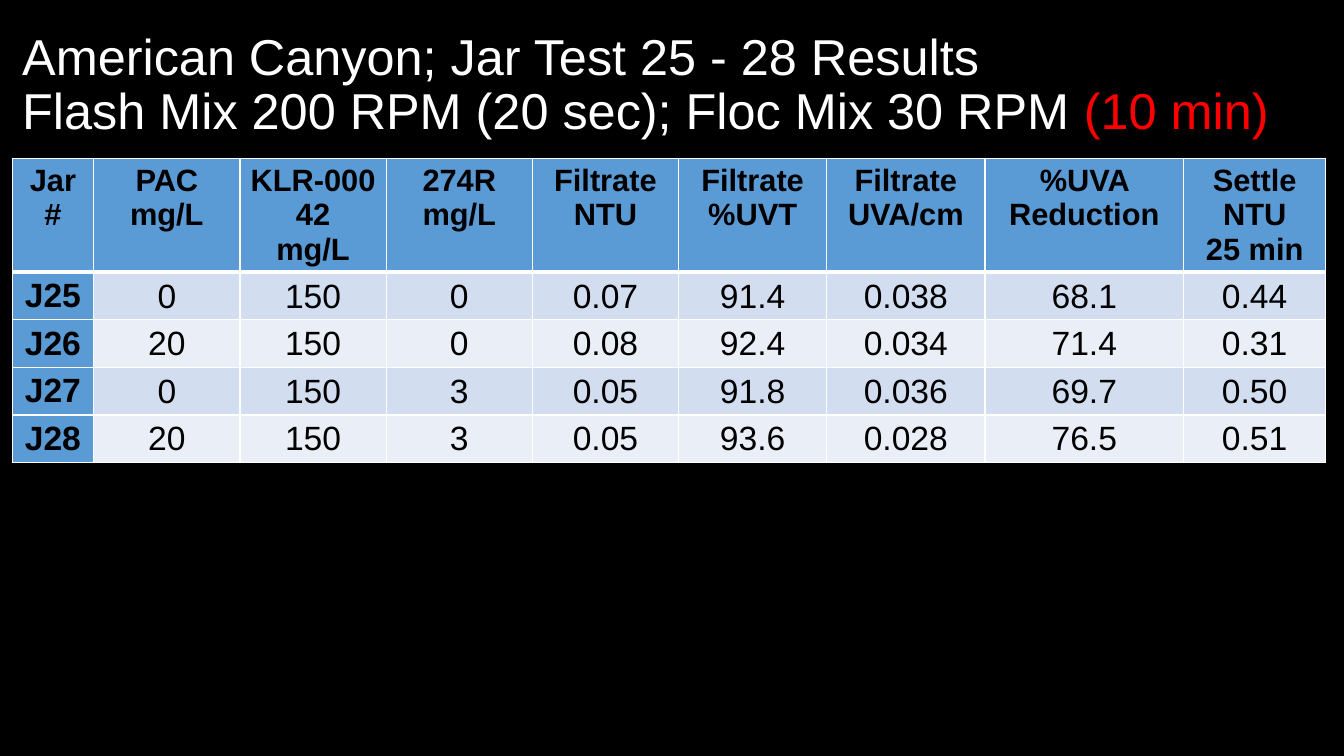
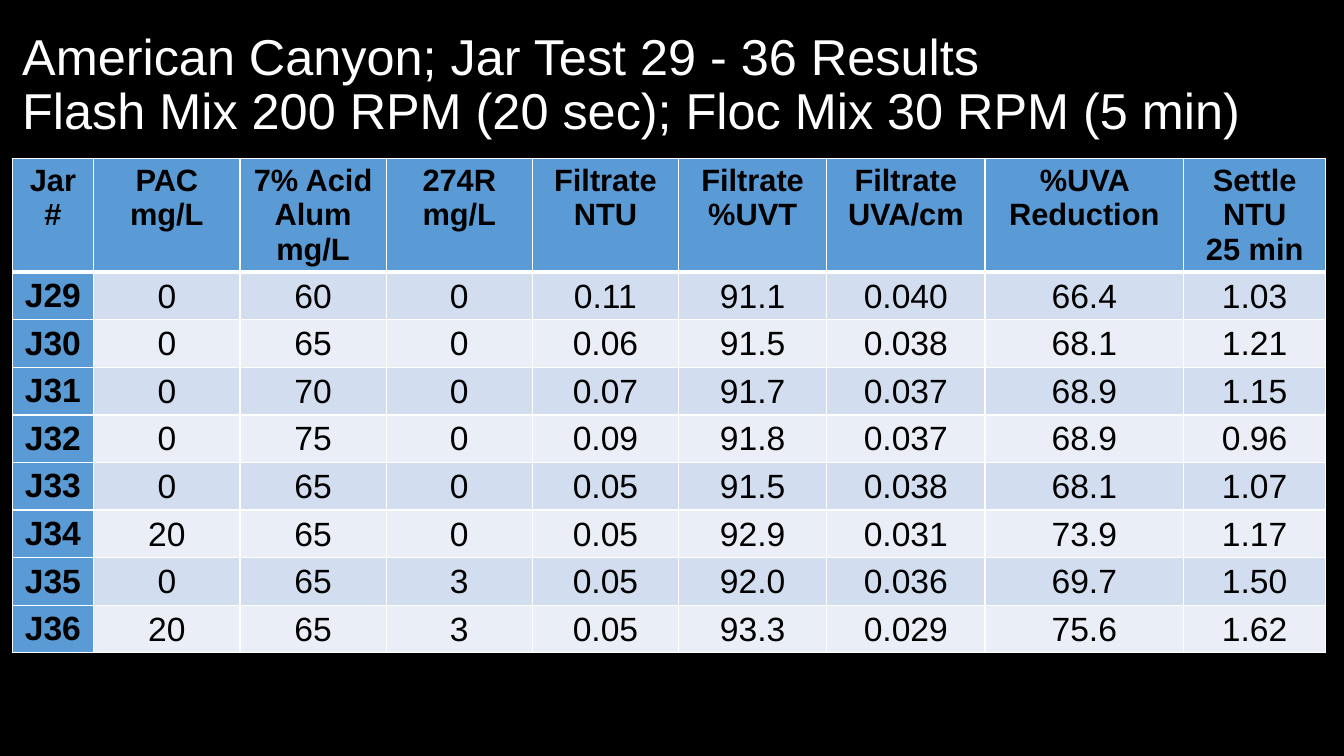
from lxml.etree import SubElement
from pptx import Presentation
from pptx.dml.color import RGBColor
from pptx.enum.text import MSO_ANCHOR, MSO_AUTO_SIZE, PP_ALIGN
from pptx.oxml.ns import qn
from pptx.util import Inches, Pt

MIX = "Flash Mix 200 RPM (20 sec); Floc Mix 30 RPM "
TESTS = [
    {
        "first": 25,
        "floc_time": ("(10 min)", "FF0000"),
        "coagulant": "KLR-00042\nmg/L",
        "rows": [
            ("0", "150", "0", "0.07", "91.4", "0.038", "68.1", "0.44"),
            ("20", "150", "0", "0.08", "92.4", "0.034", "71.4", "0.31"),
            ("0", "150", "3", "0.05", "91.8", "0.036", "69.7", "0.50"),
            ("20", "150", "3", "0.05", "93.6", "0.028", "76.5", "0.51"),
        ],
    },
    {
        "first": 29,
        "floc_time": ("(5 min)", "FFFFFF"),
        "coagulant": "7% Acid Alum\nmg/L",
        "rows": [
            ("0", "60", "0", "0.11", "91.1", "0.040", "66.4", "1.03"),
            ("0", "65", "0", "0.06", "91.5", "0.038", "68.1", "1.21"),
            ("0", "70", "0", "0.07", "91.7", "0.037", "68.9", "1.15"),
            ("0", "75", "0", "0.09", "91.8", "0.037", "68.9", "0.96"),
            ("0", "65", "0", "0.05", "91.5", "0.038", "68.1", "1.07"),
            ("20", "65", "0", "0.05", "92.9", "0.031", "73.9", "1.17"),
            ("0", "65", "3", "0.05", "92.0", "0.036", "69.7", "1.50"),
            ("20", "65", "3", "0.05", "93.3", "0.029", "75.6", "1.62"),
        ],
    },
]
MEASURES = ["274R\nmg/L", "Filtrate\nNTU", "Filtrate\n%UVT", "Filtrate\nUVA/cm",
            "%UVA Reduction", "Settle\nNTU\n25 min"]
COL_WIDTHS = [0.81, 1.45, 1.45, 1.45, 1.45, 1.47, 1.57, 1.97, 1.41]
HEADER_H, ROW_H = 1.13, 0.47
LEFT, WIDTH, TITLE_TOP, TABLE_TOP = 0.12, 13.03, 0.13, 1.57
FONT, BLACK, WHITE = "Arial", "000000", "FFFFFF"
HEAD_FILL, BANDS = "5B9BD5", ("D2DEEF", "EAEFF7")


def rgb(value):
    return RGBColor.from_string(value)


def style_run(r, size, color, bold=False):
    r.font.name, r.font.size, r.font.bold = FONT, Pt(size), bold
    r.font.color.rgb = rgb(color)


def set_borders(cell, bottom):
    tc_pr = cell._tc.get_or_add_tcPr()
    for side, width in (("L", 1), ("R", 1), ("T", 1), ("B", bottom)):
        ln = SubElement(tc_pr, qn(f"a:ln{side}"), w=str(Pt(width)))
        fill = SubElement(ln, qn("a:solidFill"))
        SubElement(fill, qn("a:srgbClr"), val=WHITE)


def format_cell(cell, text, row, col):
    cell.text_frame.text = text
    is_header = row == 0
    is_label = is_header or col == 0
    for p in cell.text_frame.paragraphs:
        p.alignment = PP_ALIGN.CENTER
        for r in p.runs:
            style_run(r, 22 if is_header else 24, BLACK, is_label)
    if not is_label:
        cell.vertical_anchor = MSO_ANCHOR.MIDDLE
        cell.margin_left = cell.margin_right = cell.margin_top = Inches(0.01)
        cell.margin_bottom = 0
    set_borders(cell, 3 if is_header else 1)
    cell.fill.solid()
    cell.fill.fore_color.rgb = rgb(HEAD_FILL if is_label else BANDS[(row - 1) % 2])


def add_title(s, test):
    last = test["first"] + len(test["rows"]) - 1
    time, time_color = test["floc_time"]
    tf = s.shapes.title.text_frame
    p = tf.paragraphs[0]
    p.text = f"American Canyon; Jar Test {test['first']} - {last} Results\v{MIX}"
    p.alignment, p.line_spacing = PP_ALIGN.LEFT, 0.9
    for r in p.runs:
        style_run(r, 36, WHITE)
    r = p.add_run()
    r.text = time
    style_run(r, 36, time_color)


def add_results(s, test):
    header = ["Jar#", "PAC\nmg/L", test["coagulant"], *MEASURES]
    jars = [(f"J{n}", *values) for n, values in enumerate(test["rows"], test["first"])]
    rows = [header, *jars]
    heights = [HEADER_H] + [ROW_H] * len(jars)
    table = s.shapes.add_table(len(rows), len(header), Inches(LEFT), Inches(TABLE_TOP),
                               Inches(WIDTH), Inches(sum(heights))).table
    for column, width in zip(table.columns, COL_WIDTHS):
        column.width = Inches(width)
    for i, (values, height) in enumerate(zip(rows, heights)):
        table.rows[i].height = Inches(height)
        for j, text in enumerate(values):
            format_cell(table.cell(i, j), text, i, j)


def style_template(prs, layout):
    background = prs.slide_master.background.fill
    background.solid()
    background.fore_color.rgb = rgb(BLACK)
    title = layout.placeholders[0]
    title.left, title.top = Inches(LEFT), Inches(TITLE_TOP)
    title.width, title.height = Inches(WIDTH), Inches(1.45)
    title.text_frame.vertical_anchor = MSO_ANCHOR.MIDDLE
    title.text_frame.auto_size = MSO_AUTO_SIZE.NONE


def main():
    prs = Presentation()
    prs.slide_width, prs.slide_height = Inches(13.33), Inches(7.5)
    layout = prs.slide_layouts.get_by_name("Title Only")
    style_template(prs, layout)
    for test in TESTS:
        s = prs.slides.add_slide(layout)
        add_title(s, test)
        add_results(s, test)
    prs.save("out.pptx")


if __name__ == "__main__":
    main()
